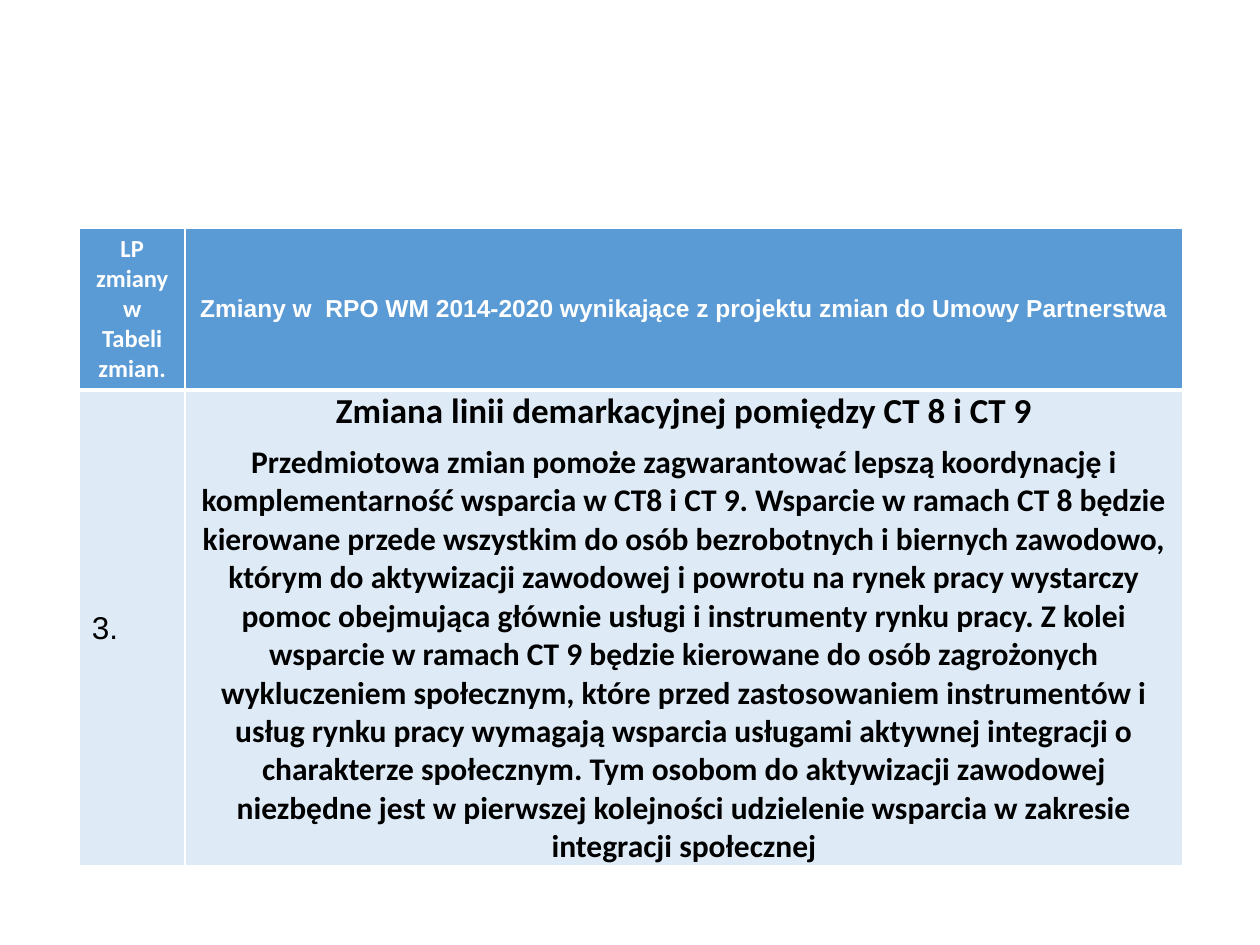
from lxml import etree
from pptx import Presentation
from pptx.dml.color import RGBColor
from pptx.enum.text import MSO_ANCHOR, PP_ALIGN
from pptx.oxml.ns import qn
from pptx.util import Cm, Pt

MIDDLE = MSO_ANCHOR.MIDDLE
LEFT, CENTER = PP_ALIGN.LEFT, PP_ALIGN.CENTER
BLANK_LAYOUT = 6

COLORS = {"header": "5B9BD5", "body": "DEEBF7", "white": "FFFFFF", "black": "000000"}

HEADER_NUMBER = "LP zmiany w Tabeli zmian."
HEADER_CHANGES = ("Zmiany w  RPO WM 2014-2020 wynikające z projektu zmian "
                  "do Umowy Partnerstwa")
CHANGE_TITLE = "Zmiana linii demarkacyjnej pomiędzy CT 8 i CT 9"
CHANGE_REASON = (
    "Przedmiotowa zmian pomoże zagwarantować lepszą koordynację i "
    "komplementarność wsparcia w CT8 i CT 9. Wsparcie w ramach CT 8 będzie "
    "kierowane przede wszystkim do osób bezrobotnych i biernych zawodowo, "
    "którym do aktywizacji zawodowej i powrotu na rynek pracy wystarczy "
    "pomoc obejmująca głównie usługi i instrumenty rynku pracy. Z kolei "
    "wsparcie w ramach CT 9 będzie kierowane do osób zagrożonych "
    "wykluczeniem społecznym, które przed zastosowaniem instrumentów i "
    "usług rynku pracy wymagają wsparcia usługami aktywnej integracji o "
    "charakterze społecznym. Tym osobom do aktywizacji zawodowej "
    "niezbędne jest w pierwszej kolejności udzielenie wsparcia w zakresie "
    "integracji społecznej"
)


class SlideBuilder:
    """Holds the style and the current slide."""

    def __init__(self, slide, colors):
        self.slide = slide
        self.colors = colors

    def rgb(self, name):
        return RGBColor.from_string(self.colors[name])

    def table(self, left, top, widths, heights):
        table = self.slide.shapes.add_table(
            len(heights), len(widths), left, top, sum(widths), sum(heights)).table
        for column, width in zip(table.columns, widths):
            column.width = width
        for row, height in zip(table.rows, heights):
            row.height = height
        return table

    def borders(self, cell, widths):
        properties = cell._tc.get_or_add_tcPr()
        for side, width in widths.items():
            line = etree.SubElement(properties, qn(f"a:ln{side}"), w=str(Pt(width)))
            fill = etree.SubElement(line, qn("a:solidFill"))
            etree.SubElement(fill, qn("a:srgbClr"), val=self.colors["white"])

    def cell(self, cell, fill, lines, borders, color="black", font="Calibri",
             bold=True, align=CENTER, space_after=0):
        """Fill a cell with lines given as (text, size) pairs."""
        self.borders(cell, borders)
        cell.fill.solid()
        cell.fill.fore_color.rgb = self.rgb(fill)
        cell.vertical_anchor = MIDDLE
        cell.text_frame.text = "\n".join(text for text, _ in lines)
        for paragraph, (_, size) in zip(cell.text_frame.paragraphs, lines):
            paragraph.alignment = align
            paragraph.space_after = Pt(space_after)
            for run in paragraph.runs:
                run.font.name = font
                run.font.size = Pt(size)
                run.font.bold = bold
                run.font.color.rgb = self.rgb(color)


def main():
    presentation = Presentation()
    presentation.slide_width, presentation.slide_height = Cm(25.4), Cm(19.05)
    slide = presentation.slides.add_slide(presentation.slide_layouts[BLANK_LAYOUT])
    builder = SlideBuilder(slide, COLORS)

    # Table of changes
    changes = builder.table(Cm(1.6), Cm(4.6), [Cm(2.13), Cm(20.12)],
                            [Cm(3.23), Cm(9.4)])

    # Header row, set off by a thick line
    header_borders = {"L": 1, "R": 1, "T": 1, "B": 3}
    for column, (text, font) in enumerate([(HEADER_NUMBER, "Calibri"),
                                           (HEADER_CHANGES, "Arial")]):
        builder.cell(changes.cell(0, column), "header", [(text, 14)],
                     header_borders, color="white", font=font)

    # Change no. 3
    body_borders = {"L": 1, "R": 1, "T": 3, "B": 1}
    builder.cell(changes.cell(1, 0), "body", [("3.", 18)], body_borders,
                 font="Arial", bold=False, align=LEFT)
    description = changes.cell(1, 1)
    description.margin_top = description.margin_bottom = Cm(0)
    builder.cell(description, "body", [(CHANGE_TITLE, 20), (CHANGE_REASON, 18)],
                 body_borders, space_after=6)

    presentation.save("out.pptx")


if __name__ == "__main__":
    main()
